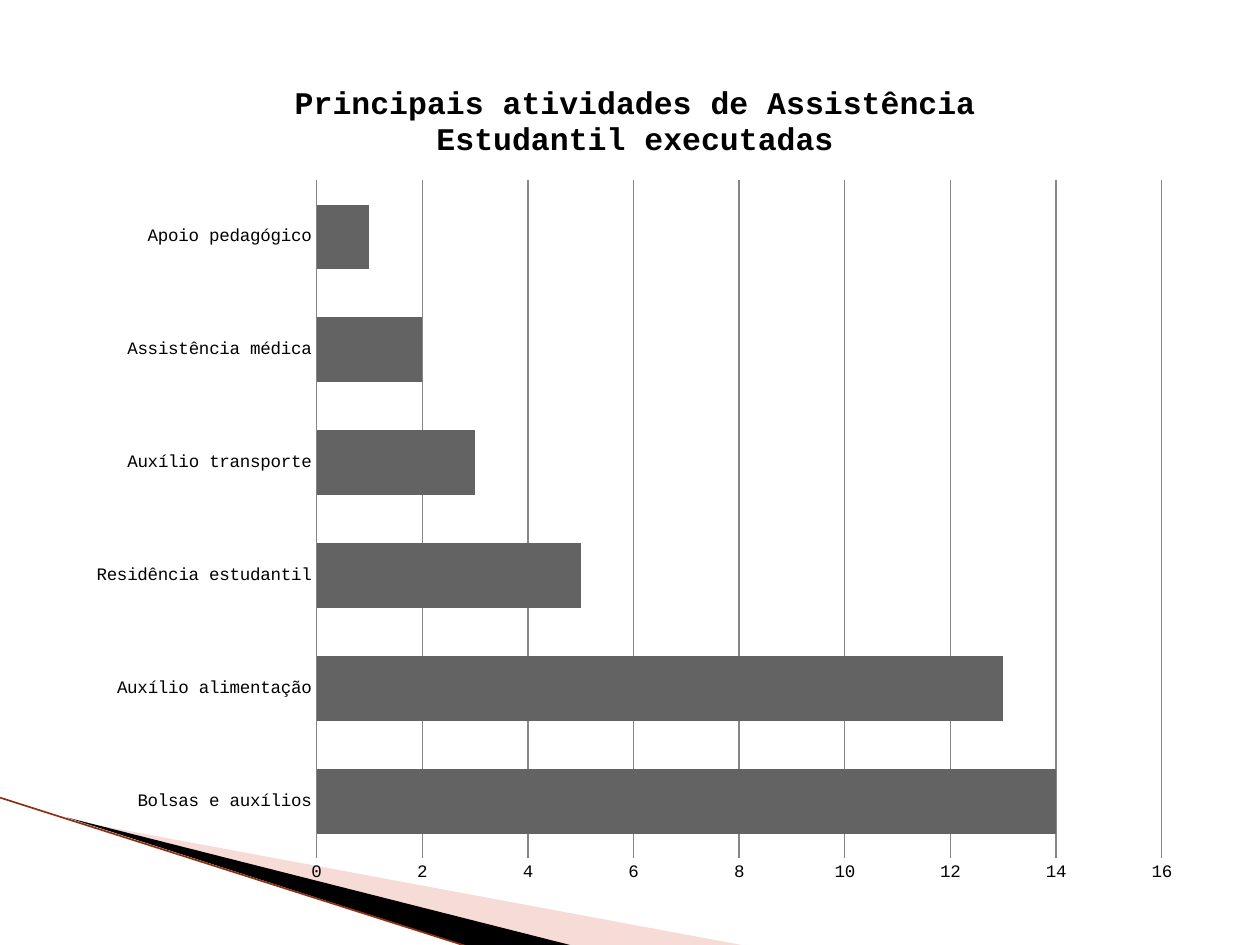
import pptx
import pptx.chart.data
import pptx.dml.color
import pptx.enum.chart
import pptx.enum.shapes
import pptx.oxml
import pptx.oxml.ns
import pptx.util
from pptx.util import Cm

COLORS = {
    "text": "000000",
    "bar": "636363",
    "grid": "868686",
    "pink": "E9A59D",
    "black": "000000",
    "edge": "8F2F10",
}
FONT = "Courier New"
TITLE = "Principais atividades de Assistência Estudantil executadas"
ACTIVITIES = {
    "Bolsas e auxílios": 14,
    "Auxílio alimentação": 13,
    "Residência estudantil": 5,
    "Auxílio transporte": 3,
    "Assistência médica": 2,
    "Apoio pedagógico": 1,
}


def rgb(name):
    return pptx.dml.color.RGBColor.from_string(COLORS[name])


def set_font(font, size, bold=False):
    font.name = FONT
    font.size = pptx.util.Pt(size)
    font.bold = bold
    font.color.rgb = rgb("text")


def set_line(line, color, width):
    line.color.rgb = rgb(color)
    line.width = pptx.util.Pt(width)


def add_wedge(s, left, top, points, color, alpha=None):
    corners = [(Cm(left + x), Cm(top + y)) for x, y in points]
    builder = s.shapes.build_freeform(*corners[0])
    builder.add_line_segments(corners[1:], close=True)
    sp = builder.convert_to_shape()
    sp.shadow.inherit = False
    sp.fill.solid()
    sp.fill.fore_color.rgb = rgb(color)
    sp.line.fill.background()
    if alpha is not None:
        clr = sp.fill._xPr.find(".//" + pptx.oxml.ns.qn("a:srgbClr"))
        clr.append(pptx.oxml.parse_xml(
            f'<a:alpha {pptx.oxml.ns.nsdecls("a")} val="{alpha * 1000}"/>'))


def add_corner(s, left, top, width, height):
    add_wedge(s, left, top, [(1.4, 0.45), (width, height), (11.58, height)], "pink", 40)
    add_wedge(s, left, top, [(1.35, 0.4), (11.61, height), (9.45, height)], "black")
    edge = s.shapes.add_connector(
        pptx.enum.shapes.MSO_CONNECTOR.STRAIGHT,
        Cm(left), Cm(top), Cm(left + 9.42), Cm(top + height))
    set_line(edge.line, "edge", 0.95)
    edge._element.spPr.append(pptx.oxml.parse_xml(
        f'<a:effectLst {pptx.oxml.ns.nsdecls("a")}/>'))


def set_plot_area(chart, x, y, w, h):
    plot_area = chart._chartSpace.chart.plotArea
    for old in plot_area.findall(pptx.oxml.ns.qn("c:layout")):
        plot_area.remove(old)
    sizes = "".join(f'<c:{k} val="{v}"/>' for k, v in zip("xywh", (x, y, w, h)))
    plot_area.insert(0, pptx.oxml.parse_xml(
        f'<c:layout {pptx.oxml.ns.nsdecls("c")}><c:manualLayout>'
        '<c:layoutTarget val="inner"/><c:xMode val="edge"/><c:yMode val="edge"/>'
        f'{sizes}</c:manualLayout></c:layout>'))


def add_activity_chart(s, left, top, width, height):
    data = pptx.chart.data.CategoryChartData()
    data.categories = list(ACTIVITIES)
    data.add_series("Series 1", list(ACTIVITIES.values()))
    chart = s.shapes.add_chart(
        pptx.enum.chart.XL_CHART_TYPE.BAR_CLUSTERED,
        Cm(left), Cm(top), Cm(width), Cm(height), data).chart
    set_font(chart.font, 10)
    chart.has_legend = False
    chart.has_title = True
    tf = chart.chart_title.text_frame
    tf.text = TITLE
    set_font(tf.paragraphs[0].runs[0].font, 18, True)
    chart.chart_title.include_in_layout = False
    set_plot_area(chart, 0.216, 0.148, 0.754, 0.804)

    plot = chart.plots[0]
    plot.gap_width = 75
    plot.overlap = -25
    plot.vary_by_categories = False
    fill = plot.series[0].format.fill
    fill.solid()
    fill.fore_color.rgb = rgb("bar")

    for axis in (chart.category_axis, chart.value_axis):
        axis.major_tick_mark = pptx.enum.chart.XL_TICK_MARK.NONE
        axis.minor_tick_mark = pptx.enum.chart.XL_TICK_MARK.NONE
        set_font(axis.tick_labels.font, 10)
    chart.category_axis.has_major_gridlines = False
    set_line(chart.category_axis.format.line, "grid", 0.75)

    values = chart.value_axis
    values.minimum_scale = 0
    values.maximum_scale = 16
    values.major_unit = 2
    values.has_major_gridlines = True
    set_line(values.major_gridlines.format.line, "grid", 0.75)
    values.format.line.fill.background()


def main():
    prs = pptx.Presentation()
    prs.slide_width = Cm(25.4)
    prs.slide_height = Cm(19.05)
    s = prs.slides.add_slide(prs.slide_layouts[6])
    add_corner(s, 0, 16.08, 15.11, 3)
    add_activity_chart(s, 1.5, 1.12, 22.6, 17)
    prs.save("out.pptx")


if __name__ == "__main__":
    main()
